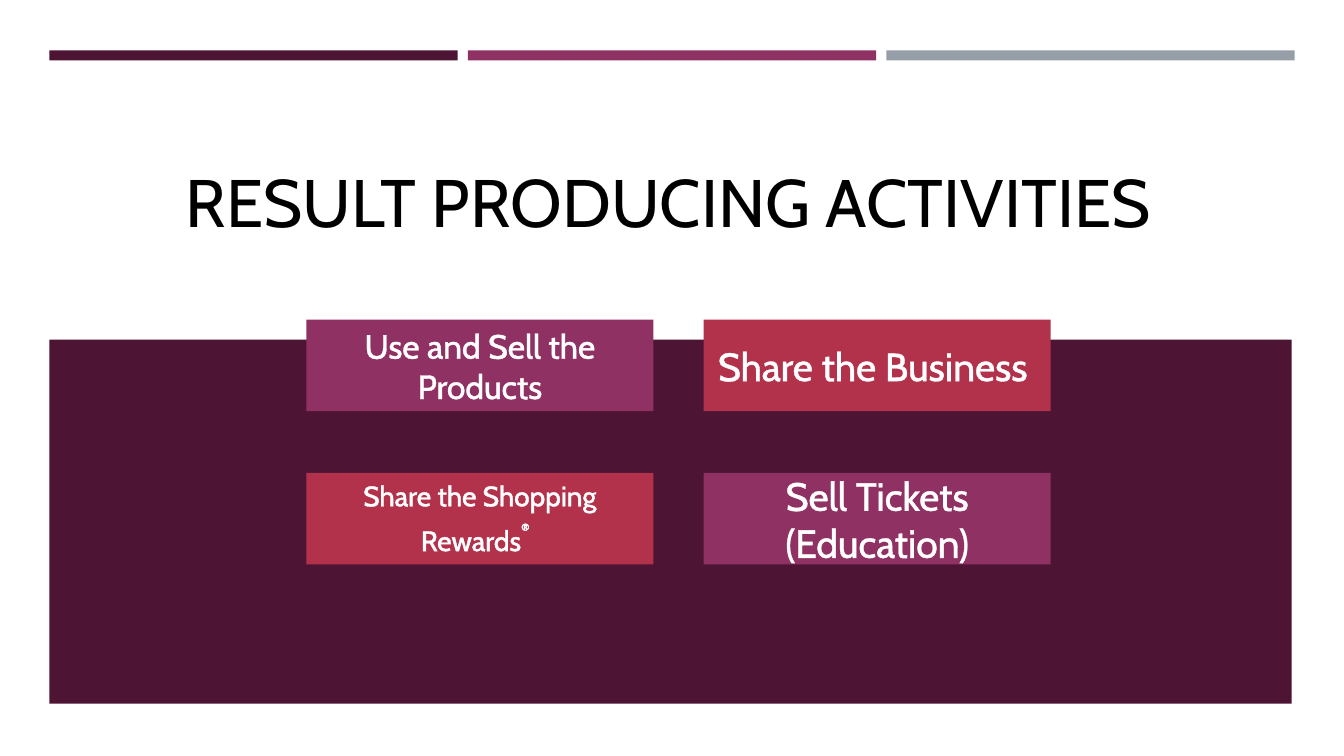
from lxml import etree
from pptx import Presentation
from pptx.dml.color import RGBColor
from pptx.enum import shapes, text
from pptx.oxml.ns import qn
from pptx.util import Inches, Pt

PLUM, MAGENTA, RED, GREY = "4D1434", "903163", "B2324B", "969FA7"
WHITE, BLACK = "FFFFFF", "000000"

TITLE = "RESULT PRODUCING ACTIVITIES "
STRIPES = [PLUM, MAGENTA, GREY]
# Each activity: fill and its runs as (words, size, font, superscript)
ACTIVITIES = [
    (MAGENTA, [("Use and Sell the Products", 24, "Cabin", False)]),
    (RED, [("Share the Business ", 28, "Cabin", False)]),
    (RED, [("Share the Shopping Rewards", 20, "Cabin", False),
           ("®", 28, "Calibri", True),
           (" ", 20, "Cabin", False)]),
    (MAGENTA, [("Sell Tickets (Education)", 28, "Cabin", False)]),
]


def rgb(color):
    return RGBColor.from_string(color)


def style(font, size, name, color):
    font.size, font.name = Pt(size), name
    font.color.rgb = rgb(color)


def add_block(slide, left, top, width, height, color):
    block = slide.shapes.add_shape(
        shapes.MSO_SHAPE.RECTANGLE,
        Inches(left), Inches(top), Inches(width), Inches(height))
    block.shadow.inherit = False
    block.fill.solid()
    block.fill.fore_color.rgb = rgb(color)
    block.line.fill.background()
    return block


def set_margins(frame):
    frame.margin_left = frame.margin_right = Inches(0.07)
    frame.margin_top = frame.margin_bottom = Inches(0.04)


def outline(run, color):
    """Give the letters a thin outline."""
    line = etree.Element(qn("a:ln"), w=str(Pt(0.75)))
    fill = etree.SubElement(line, qn("a:solidFill"))
    etree.SubElement(fill, qn("a:srgbClr"), val=color)
    run.font._element.insert(0, line)


def add_title(slide):
    title = slide.shapes.add_textbox(
        Inches(1.69), Inches(1.55), Inches(10.03), Inches(0.88))
    frame = title.text_frame
    set_margins(frame)
    frame.word_wrap = False
    frame.auto_size = text.MSO_AUTO_SIZE.SHAPE_TO_FIT_TEXT
    heading = frame.paragraphs[0]
    heading.text = TITLE
    heading.alignment = text.PP_ALIGN.CENTER
    style(heading.font, 48, "Cabin", BLACK)


def add_activity(slide, index, color, runs):
    row, column = divmod(index, 2)
    block = add_block(slide, 3.04 + column * 3.94, 3.17 + row * 1.52,
                      3.44, 0.91, color)
    frame = block.text_frame
    set_margins(frame)
    frame.word_wrap = True
    frame.vertical_anchor = text.MSO_ANCHOR.MIDDLE
    label = frame.paragraphs[0]
    label.alignment = text.PP_ALIGN.CENTER
    for words, size, name, superscript in runs:
        run = label.add_run()
        run.text = words
        style(run.font, size, name, WHITE)
        outline(run, WHITE)
        if superscript:
            run.font._element.set("baseline", "30000")


def main():
    deck = Presentation()
    deck.slide_width, deck.slide_height = Inches(13.33), Inches(7.5)
    slide = deck.slides.add_slide(deck.slide_layouts[6])
    for index, color in enumerate(STRIPES):
        add_block(slide, 0.49 + index * 4.15, 0.5, 4.05, 0.1, color)
    add_block(slide, 0.49, 3.37, 12.32, 3.61, PLUM)
    add_title(slide)
    for index, (color, runs) in enumerate(ACTIVITIES):
        add_activity(slide, index, color, runs)
    deck.save("out.pptx")


if __name__ == "__main__":
    main()
